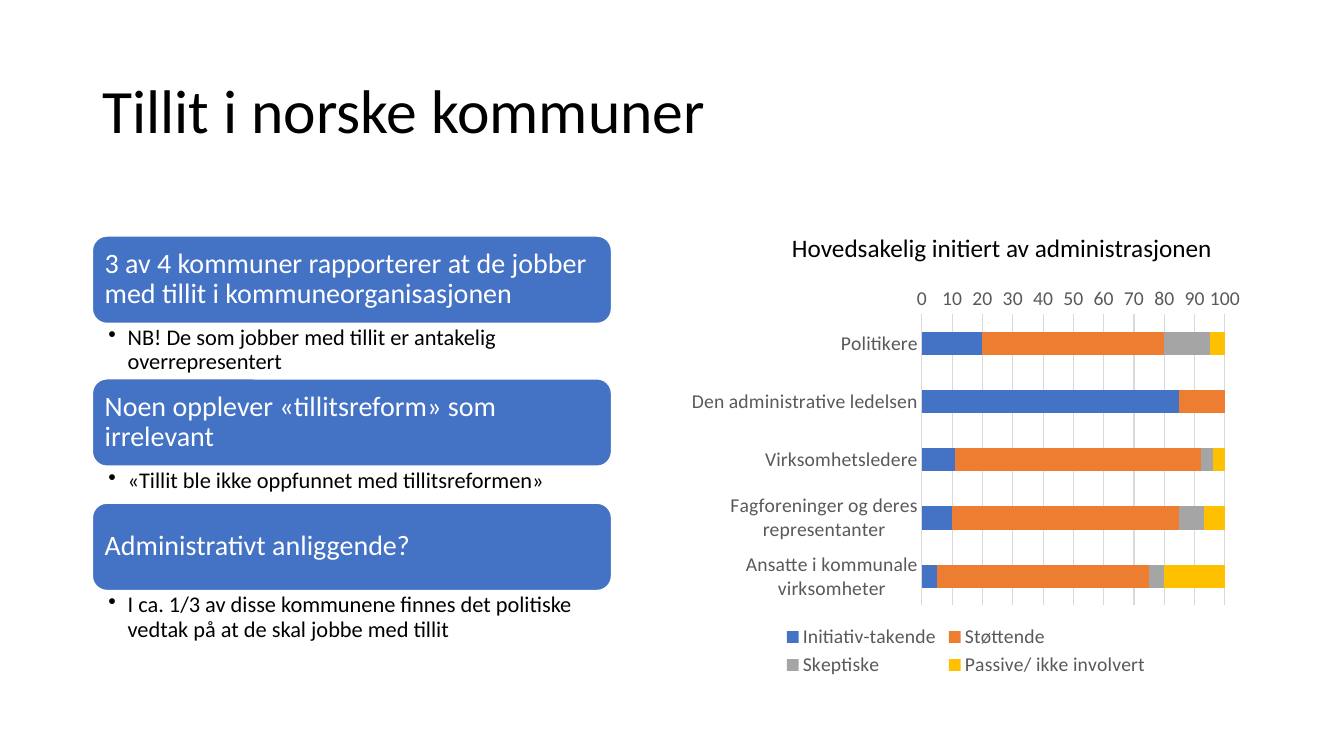
from lxml.etree import SubElement
from pptx import Presentation
from pptx.chart.data import CategoryChartData
from pptx.dml.color import RGBColor
from pptx.enum.chart import XL_CHART_TYPE, XL_LEGEND_POSITION, XL_TICK_MARK
from pptx.enum.shapes import MSO_SHAPE
from pptx.enum.text import MSO_ANCHOR, MSO_AUTO_SIZE, PP_ALIGN
from pptx.oxml.ns import qn
from pptx.util import Inches, Pt

HUES = {
    "black": "000000", "white": "FFFFFF", "grey": "595959", "pale": "D9D9D9",
    "blue": "4472C4", "orange": "ED7D31", "silver": "A5A5A5", "gold": "FFC000",
}
POINTS = [
    ("3 av 4 kommuner rapporterer at de jobber med tillit i kommuneorganisasjonen",
     "NB! De som jobber med tillit er antakelig overrepresentert", 6.6),
    ("Noen opplever «tillitsreform» som irrelevant",
     "«Tillit ble ikke oppfunnet med tillitsreformen»", 4.4),
    ("Administrativt anliggende?",
     "I ca. 1/3 av disse kommunene finnes det politiske vedtak på at de skal jobbe med tillit", 6.6),
]
GROUPS = ["Politikere", "Den administrative ledelsen", "Virksomhetsledere",
          "Fagforeninger og deres representanter", "Ansatte i kommunale virksomheter"]
ROLES = [
    ("Initiativ-takende", (20, 85, 11, 10, 5), "blue"),
    ("Støttende", (60, 15, 81, 75, 70), "orange"),
    ("Skeptiske", (15, 0, 4, 8, 5), "silver"),
    ("Passive/ ikke involvert", (5, 0, 4, 7, 20), "gold"),
]


class Deck:
    """Holds the style and the slide, on a grid of 160 columns by 90 rows."""

    def __init__(self):
        self.file = Presentation()
        self.file.slide_width = Inches(13.33)
        self.file.slide_height = Inches(7.5)
        self.col = self.file.slide_width / 160
        self.row = self.file.slide_height / 90
        self.slide = self.file.slides.add_slide(self.file.slide_layouts[5])
        self.face = "Calibri"

    def hue(self, name):
        return RGBColor.from_string(HUES[name])

    def grid(self, x, y, w, h):
        return [round(n) for n in (x * self.col, y * self.row, w * self.col, h * self.row)]

    def font(self, font, size, hue):
        font.name, font.size = self.face, Pt(size)
        font.color.rgb = self.hue(hue)

    def words(self, shape, text, size, hue="black", pad=(0.1, 0.05),
              anchor=MSO_ANCHOR.TOP, lead=0.9):
        frame = shape.text_frame
        frame.word_wrap = True
        frame.auto_size = MSO_AUTO_SIZE.NONE
        frame.vertical_anchor = anchor
        frame.margin_left = frame.margin_right = Inches(pad[0])
        frame.margin_top = frame.margin_bottom = Inches(pad[1])
        frame.text = text
        para = frame.paragraphs[0]
        para.alignment = PP_ALIGN.LEFT
        para.line_spacing = lead
        self.font(para.font, size, hue)
        return para

    def title(self, text, *box):
        shape = self.slide.shapes.title
        shape.left, shape.top, shape.width, shape.height = self.grid(*box)
        self.words(shape, text, 44, anchor=MSO_ANCHOR.MIDDLE)

    def label(self, text, size, *box, **style):
        shape = self.slide.shapes.add_textbox(*self.grid(*box))
        return self.words(shape, text, size, **style)

    def bullet(self, text, *box):
        para = self.label(text, 16, *box, pad=(0.16, 0.03))
        props = para._p.get_or_add_pPr()
        props.set("marL", str(Inches(0.19)))
        props.set("indent", str(-Inches(0.19)))
        SubElement(props, qn("a:buChar")).set("char", "•")

    def card(self, text, *box):
        shape = self.slide.shapes.add_shape(MSO_SHAPE.ROUNDED_RECTANGLE, *self.grid(*box))
        shape.shadow.inherit = False
        shape.fill.solid()
        shape.fill.fore_color.rgb = self.hue("blue")
        shape.line.color.rgb = self.hue("white")
        shape.line.width = Pt(1)
        self.words(shape, text, 20, "white", (0.08, 0.08), MSO_ANCHOR.MIDDLE)

    def rule(self, line):
        line.color.rgb = self.hue("pale")
        line.width = Pt(0.75)

    def chart(self, cats, rows, *box):
        data = CategoryChartData()
        data.categories = cats
        for name, vals, _ in rows:
            data.add_series(name, vals)
        chart = self.slide.shapes.add_chart(
            XL_CHART_TYPE.BAR_STACKED, *self.grid(*box), data).chart
        self.font(chart.font, 14, "grey")
        chart.has_title = False
        chart.has_legend = True
        chart.legend.position = XL_LEGEND_POSITION.BOTTOM
        chart.legend.include_in_layout = False
        self.font(chart.legend.font, 14, "grey")
        plot = chart.plots[0]
        plot.gap_width, plot.overlap, plot.vary_by_categories = 150, 100, False
        for bar, (_, _, hue) in zip(plot.series, rows):
            bar.format.fill.solid()
            bar.format.fill.fore_color.rgb = self.hue(hue)
        cat, val = chart.category_axis, chart.value_axis
        for axis in (cat, val):
            axis.major_tick_mark = axis.minor_tick_mark = XL_TICK_MARK.NONE
            self.font(axis.tick_labels.font, 14, "grey")
        cat.reverse_order = True
        self.rule(cat.format.line)
        val.minimum_scale, val.maximum_scale, val.major_unit = 0, 100, 10
        val.format.line.fill.background()
        val.has_major_gridlines = True
        self.rule(val.major_gridlines.format.line)


def main():
    deck = Deck()
    deck.title("Tillit i norske kommuner", 11, 4.8, 138, 17.4)
    top, tall = 28.1, 10.4
    for head, note, deep in POINTS:
        deck.card(head, 11, top, 61.8, tall)
        deck.bullet(note, 11, top + tall, 61.8, deep)
        top += tall + deep
    deck.chart(GROUPS, ROLES, 81, 33.1, 68, 48)
    deck.label("Hovedsakelig initiert av administrasjonen", 18, 93.1, 27.1, 55.9, 4.8, lead=1.0)
    deck.file.save("out.pptx")


if __name__ == "__main__":
    main()
